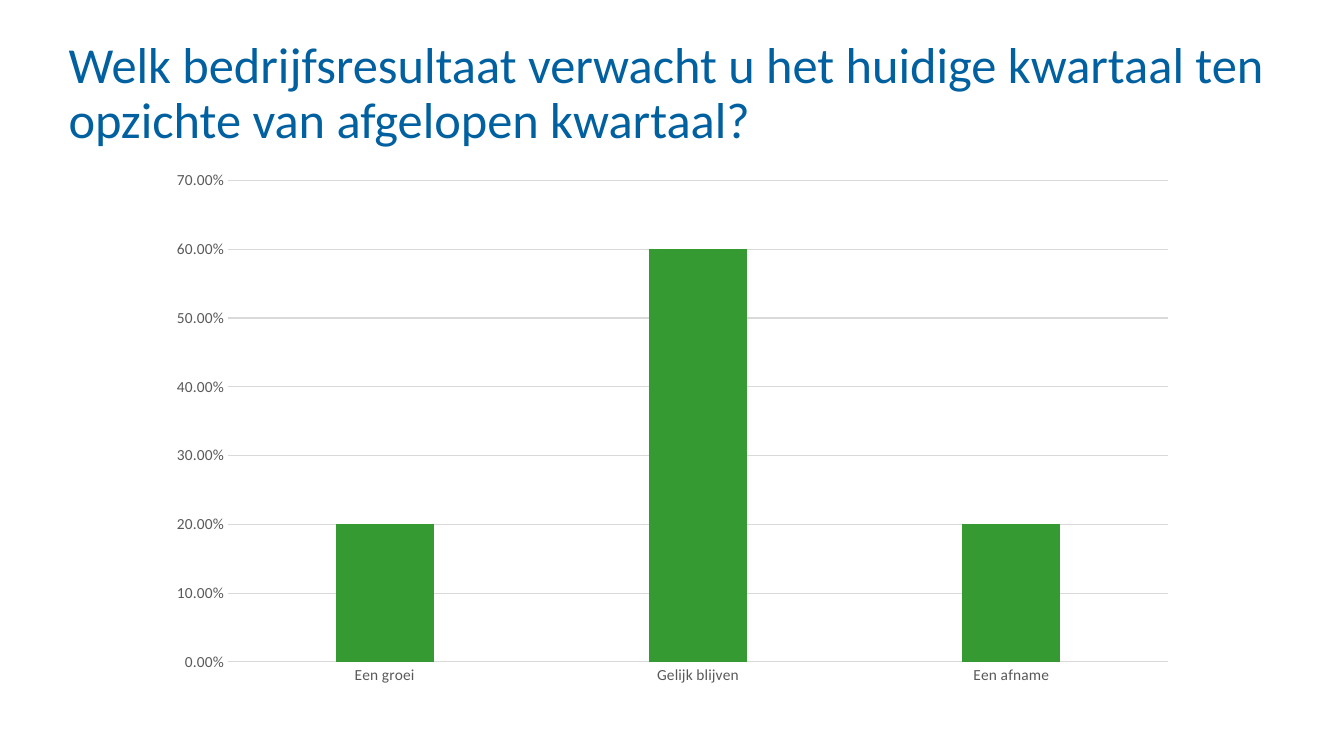
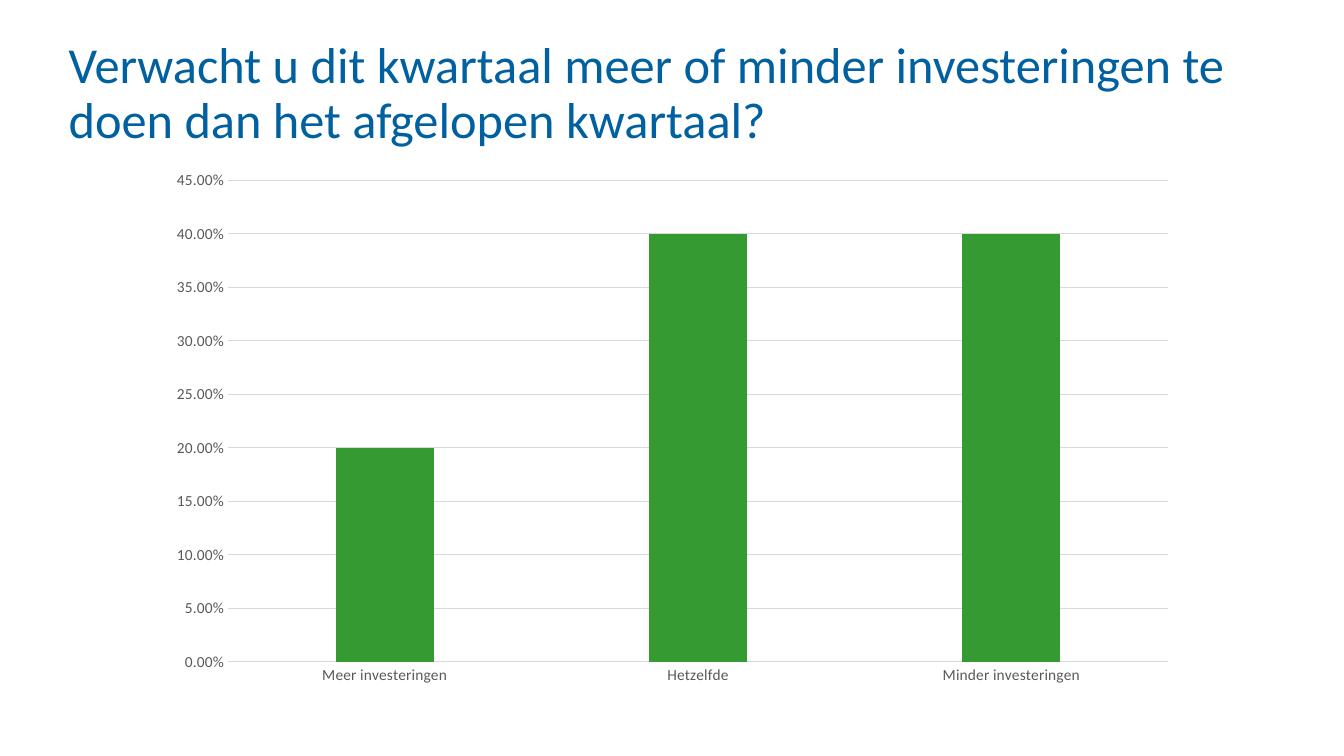
from pptx import Presentation
from pptx.chart.data import CategoryChartData
from pptx.dml.color import RGBColor
from pptx.enum.chart import XL_CHART_TYPE, XL_TICK_MARK
from pptx.enum.text import MSO_ANCHOR
from pptx.util import Inches, Pt

COLUMNS = XL_CHART_TYPE.COLUMN_CLUSTERED
NO_TICK = XL_TICK_MARK.NONE
TOP = MSO_ANCHOR.TOP

FONT = "Calibri"
TITLE_BLUE = "0060A0"
BAR_GREEN = "359A32"
LABEL_GREY = "595959"
GRID_GREY = "D9D9D9"
PERCENT = "0.00%"

QUESTIONS = [
    {
        "title": "Welk bedrijfsresultaat verwacht u het huidige kwartaal ten "
                 "opzichte van afgelopen kwartaal?",
        "answers": {"Een groei": 0.2, "Gelijk blijven": 0.6, "Een afname": 0.2},
        "axis_max": 0.7,
        "axis_step": 0.1,
    },
    {
        "title": "Verwacht u dit kwartaal meer of minder investeringen te "
                 "doen dan het afgelopen kwartaal?",
        "answers": {"Meer investeringen": 0.2, "Hetzelfde": 0.4,
                    "Minder investeringen": 0.4},
        "axis_max": 0.45,
        "axis_step": 0.05,
    },
]

TITLE_BOX = [Inches(n) for n in (0.68, 0.4, 11.95, 0.76)]
CHART_BOX = [Inches(n) for n in (1.55, 1.59, 10.24, 5.31)]


def rgb(hex_colour):
    return RGBColor.from_string(hex_colour)


def style_font(font, size, colour):
    font.name = FONT
    font.size = Pt(size)
    font.color.rgb = rgb(colour)


def style_line(line, colour, width=0.75):
    line.color.rgb = rgb(colour)
    line.width = Pt(width)


def add_text(slide, text, box, size, colour, line_spacing=0.9):
    frame = slide.shapes.add_textbox(*box).text_frame
    frame.word_wrap = True
    frame.vertical_anchor = TOP
    frame.margin_left = frame.margin_right = 0
    frame.margin_top = frame.margin_bottom = 0
    paragraph = frame.paragraphs[0]
    paragraph.line_spacing = line_spacing
    run = paragraph.add_run()
    run.text = text
    style_font(run.font, size, colour)


def add_answer_chart(slide, answers, axis_max, axis_step):
    data = CategoryChartData(number_format=PERCENT)
    data.categories = list(answers)
    data.add_series("Series 1", list(answers.values()))
    chart = slide.shapes.add_chart(COLUMNS, *CHART_BOX, data).chart
    chart.has_title = False
    chart.has_legend = False
    style_font(chart.font, 10, "000000")

    plot = chart.plots[0]
    plot.vary_by_categories = False
    plot.gap_width = 219
    plot.overlap = -27
    bars = plot.series[0].format
    bars.fill.solid()
    bars.fill.fore_color.rgb = rgb(BAR_GREEN)
    bars.line.fill.background()

    for axis in (chart.category_axis, chart.value_axis):
        axis.major_tick_mark = axis.minor_tick_mark = NO_TICK
        style_font(axis.tick_labels.font, 11, LABEL_GREY)
    style_line(chart.category_axis.format.line, GRID_GREY)

    values = chart.value_axis
    values.minimum_scale = 0
    values.maximum_scale = axis_max
    values.major_unit = axis_step
    values.tick_labels.number_format = PERCENT
    values.tick_labels.number_format_is_linked = False
    values.format.line.fill.background()
    style_line(values.major_gridlines.format.line, GRID_GREY)


def main():
    deck = Presentation()
    deck.slide_width = Inches(13.33)
    deck.slide_height = Inches(7.5)
    blank = deck.slide_layouts[6]
    for question in QUESTIONS:
        slide = deck.slides.add_slide(blank)
        add_text(slide, question["title"], TITLE_BOX, size=36, colour=TITLE_BLUE)
        add_answer_chart(slide, question["answers"],
                         question["axis_max"], question["axis_step"])
    deck.save("out.pptx")


if __name__ == "__main__":
    main()
